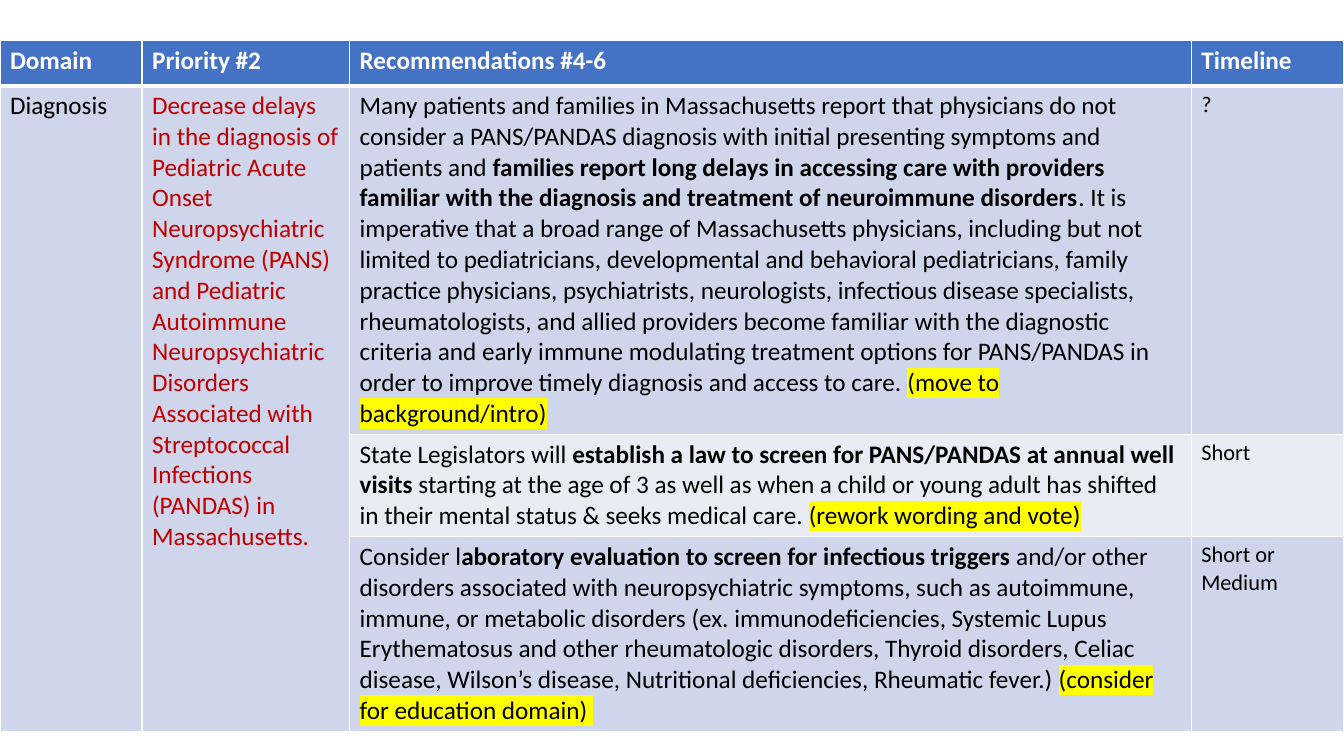
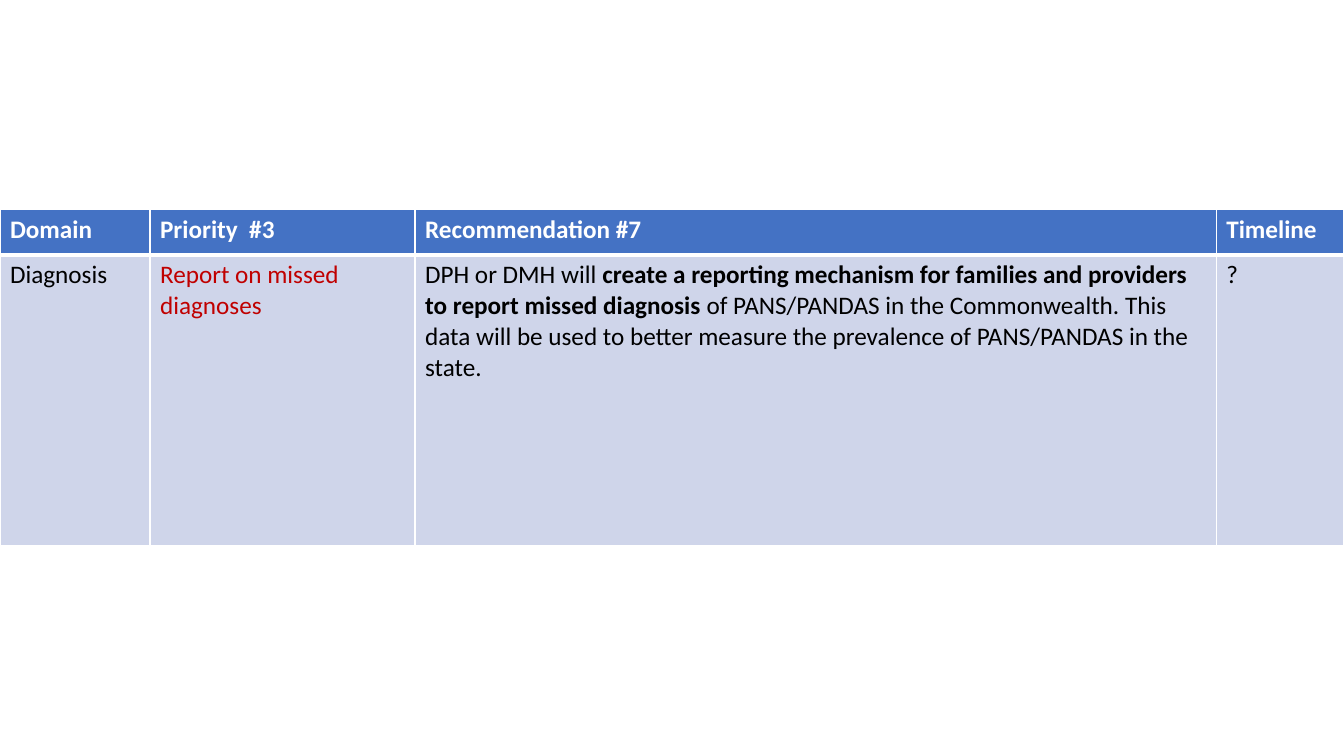
from dataclasses import dataclass

from lxml.etree import SubElement
from pptx import Presentation
from pptx.dml.color import RGBColor
from pptx.oxml import parse_xml
from pptx.oxml.ns import nsdecls, qn
from pptx.util import Cm, Pt


@dataclass(frozen=True)
class Theme:
    font: str = "Calibri"
    body_size: int = 18
    small_size: int = 16
    header_fill: str = "4472C4"
    band_fills: tuple = ("CFD5EA", "E9EBF5")
    header_text: str = "FFFFFF"
    body_text: str = "000000"
    priority_text: str = "C00000"
    marker: str = "FFFF00"
    border: str = "FFFFFF"
    thin: float = 1
    thick: float = 3


THEME = Theme()


def write(paragraph, text, *, size=THEME.body_size, color=THEME.body_text,
          bold=False, highlight=None):
    run = paragraph.add_run()
    run.text = text
    font = run.font
    font.size, font.bold = Pt(size), bold
    font.color.rgb = RGBColor.from_string(color)
    font.name = THEME.font
    if highlight:
        color_fill = run._r.rPr.find(qn("a:solidFill"))
        color_fill.addnext(parse_xml(
            f'<a:highlight {nsdecls("a")}><a:srgbClr val="{highlight}"/></a:highlight>'))


def plain(text, **fmt):
    return text, fmt


def bold(text):
    return text, {"bold": True}


def note(text):
    return text, {"highlight": THEME.marker}


def small(text):
    return text, {"size": THEME.small_size}


def header(text):
    return text, {"color": THEME.header_text, "bold": True}


def priority(text):
    return text, {"color": THEME.priority_text}


class Deck:
    def __init__(self, theme):
        self.theme = theme
        self.presentation = Presentation()
        self.presentation.slide_width = Cm(33.87)
        self.presentation.slide_height = Cm(19.05)
        self.slide = None

    def add_slide(self):
        blank = self.presentation.slide_layouts[6]
        self.slide = self.presentation.slides.add_slide(blank)

    def add_borders(self, cell, row):
        """White grid, with a heavier line between header and body."""
        properties = cell._tc.get_or_add_tcPr()
        heavy_side = {0: "lnB", 1: "lnT"}.get(row)
        for position, side in enumerate(("lnL", "lnR", "lnT", "lnB")):
            width = self.theme.thick if side == heavy_side else self.theme.thin
            line = SubElement(properties, qn(f"a:{side}"), w=str(Pt(width)))
            fill = SubElement(line, qn("a:solidFill"))
            SubElement(fill, qn("a:srgbClr"), val=self.theme.border)
            properties.insert(position, line)

    def add_priority_table(self, top, widths, heights, headings, topic, goal,
                           recommendations):
        """Topic and goal span all rows of (recommendation runs, timeline)."""
        table = self.slide.shapes.add_table(
            len(heights), len(widths), Cm(0), Cm(top),
            Cm(sum(widths)), Cm(sum(heights))).table
        table.first_row = table.horz_banding = False
        for column, width in zip(table.columns, widths):
            column.width = Cm(width)
        for row, height in zip(table.rows, heights):
            row.height = Cm(height)

        content = [[[header(heading)] for heading in headings]]
        for index, (runs, timeline) in enumerate(recommendations):
            spanning = [[plain(topic)], [priority(goal)]] if index == 0 else [[], []]
            content.append([*spanning, runs, [timeline]])

        for row, cells in enumerate(content):
            for column, runs in enumerate(cells):
                cell = table.cell(row, column)
                band = 0 if column < 2 else (row - 1) % 2
                fill = self.theme.band_fills[band] if row else self.theme.header_fill
                cell.fill.solid()
                cell.fill.fore_color.rgb = RGBColor.from_string(fill)
                self.add_borders(cell, row)
                for text, fmt in runs:
                    write(cell.text_frame.paragraphs[0], text, **fmt)

        if len(recommendations) > 1:
            for column in range(2):
                table.cell(1, column).merge(table.cell(len(recommendations), column))


def add_delays_slide(deck):
    deck.add_slide()
    deck.add_priority_table(
        top=1.02,
        widths=(3.58, 5.23, 21.21, 3.84),
        heights=(1.14, 8.51, 2.51, 4.78),
        headings=("Domain", "Priority #2", "Recommendations #4-6", "Timeline"),
        topic="Diagnosis",
        goal="Decrease delays in the diagnosis of Pediatric Acute Onset "
             "Neuropsychiatric Syndrome (PANS) and Pediatric Autoimmune "
             "Neuropsychiatric Disorders Associated with Streptococcal "
             "Infections (PANDAS) in Massachusetts.",
        recommendations=[
            ([plain("Many patients and families in Massachusetts report that "
                    "physicians do not consider a PANS/PANDAS diagnosis with "
                    "initial presenting symptoms and patients and "),
              bold("families report long delays in accessing care with providers "
                   "familiar with the diagnosis and treatment of neuroimmune "
                   "disorders"),
              plain(". It is imperative that a broad range of Massachusetts "
                    "physicians, including but not limited to pediatricians, "
                    "developmental and behavioral pediatricians, family practice "
                    "physicians, psychiatrists, neurologists, infectious disease "
                    "specialists, rheumatologists, and allied providers become "
                    "familiar with the diagnostic criteria and early immune "
                    "modulating treatment options for PANS/PANDAS in order to "
                    "improve timely diagnosis and access to care. "),
              note("(move to background/intro)")],
             small("?")),
            ([plain("State Legislators will "),
              bold("establish a law to screen for PANS/PANDAS at annual well visits"),
              plain(" starting at the age of 3 as well as when a child or young "
                    "adult has shifted in their mental status & seeks medical "
                    "care. "),
              note("(rework wording and vote)")],
             small("Short")),
            ([plain("Consider l"),
              bold("aboratory evaluation to screen for infectious triggers"),
              plain(" and/or other disorders associated with neuropsychiatric "
                    "symptoms, such as autoimmune, immune, or metabolic disorders "
                    "(ex. immunodeficiencies, Systemic Lupus Erythematosus and "
                    "other rheumatologic disorders, Thyroid disorders, Celiac "
                    "disease, Wilson’s disease, Nutritional deficiencies, "
                    "Rheumatic fever.) "),
              note("(consider for education domain) ")],
             small("Short or Medium")),
        ])


def add_missed_diagnoses_slide(deck):
    deck.add_slide()
    deck.add_priority_table(
        top=5.28,
        widths=(3.78, 6.68, 20.19, 3.2),
        heights=(1.14, 7.34),
        headings=("Domain", "Priority  #3", "Recommendation #7", "Timeline"),
        topic="Diagnosis",
        goal="Report on missed diagnoses",
        recommendations=[
            ([plain("DPH or DMH will "),
              bold("create a reporting mechanism for families and providers to "
                   "report missed diagnosis"),
              plain(" of PANS/PANDAS in the Commonwealth. This data will be used "
                    "to better measure the prevalence of PANS/PANDAS in the "
                    "state.")],
             plain("?")),
        ])


def main():
    deck = Deck(THEME)
    add_delays_slide(deck)
    add_missed_diagnoses_slide(deck)
    deck.presentation.save("out.pptx")


if __name__ == "__main__":
    main()
